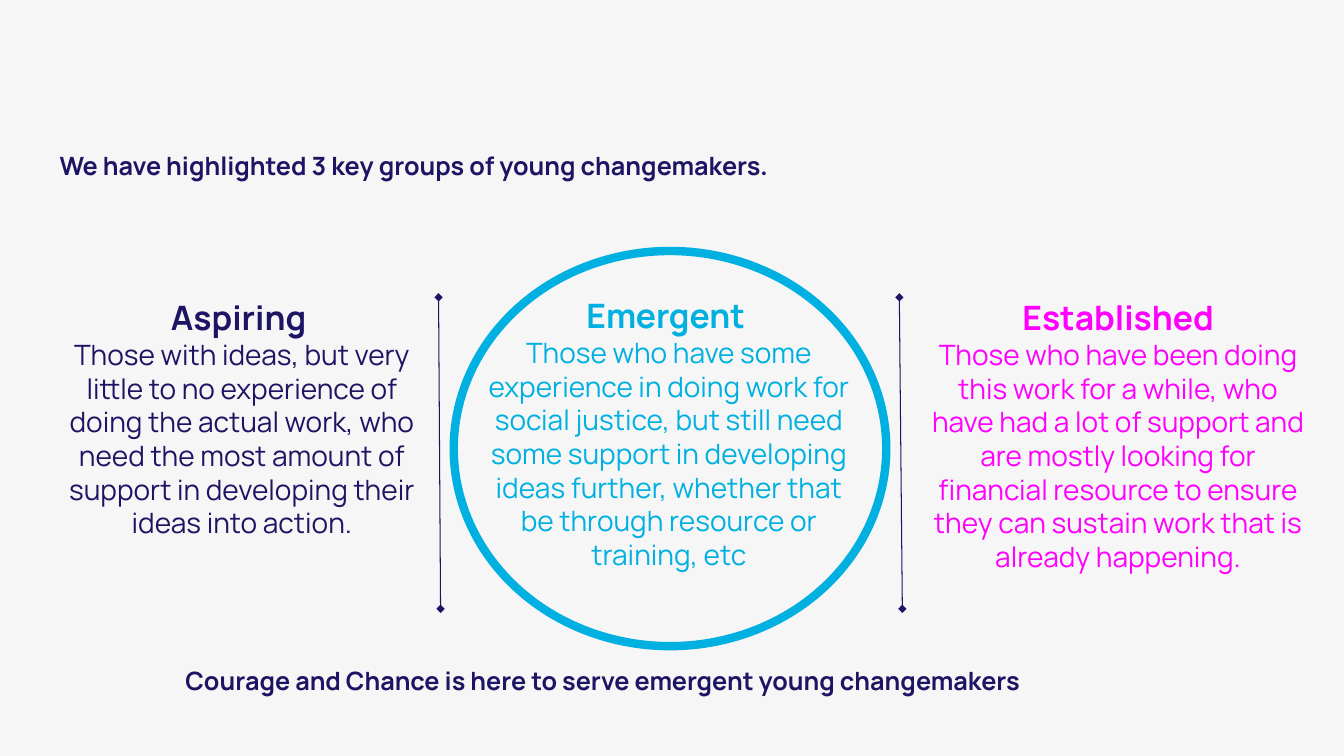
"""Build a slide that compares three groups of young changemakers."""
from lxml.etree import SubElement
from pptx import Presentation
from pptx.dml.color import RGBColor
from pptx.enum.shapes import MSO_CONNECTOR as Connector, MSO_SHAPE as Shape
from pptx.enum.text import MSO_ANCHOR as Anchor, MSO_AUTO_SIZE as AutoSize, PP_ALIGN as Align
from pptx.oxml.ns import qn
from pptx.util import Inches, Pt

COLORS = {"paper": "F6F6F6", "navy": "1E1464", "cyan": "00B0E0", "pink": "FF00FF"}
FONT = "Manrope"
HEADLINE = "We have highlighted 3 key groups of young changemakers"
CLOSING = "Courage and Chance is here to serve emergent young changemakers"
GROUPS = [
    ("Aspiring ", "Those with ideas, but very little to no experience of doing the actual work, "
     "who need the most amount of support in developing their ideas into action.",
     "navy", (0.67, 2.95, 3.46, 2.76)),
    ("Emergent ", "Those who have some experience in doing work for social justice, but still need "
     "some support in developing ideas further, whether that be through resource or training, etc",
     "cyan", (4.76, 2.93, 3.75, 2.76)),
    ("Established", "Those who have been doing this work for a while, who have had a lot of support "
     "and are mostly looking for financial resource to ensure they can sustain work that is "
     "already happening.",
     "pink", (9.17, 2.95, 3.84, 3.1)),
]
DIVIDERS = [(4.35, 4.37), (8.92, 8.95)]
DIVIDER_TOP, DIVIDER_BOTTOM = 2.95, 6.04
HIGHLIGHT = (4.5, 2.49, 4.29, 3.92)


def color(name):
    return RGBColor.from_string(COLORS[name])


def add_run(para, text, size, shade, bold=True, font=FONT):
    span = para.add_run()
    span.text = text
    span.font.name, span.font.size, span.font.bold = font, Pt(size), bold
    span.font.color.rgb = color(shade)


def prepare_frame(box, margin=0):
    frame = box.text_frame
    frame.word_wrap = True
    frame.auto_size = AutoSize.NONE
    frame.vertical_anchor = Anchor.TOP
    if margin == 0:
        frame.margin_left = frame.margin_right = frame.margin_top = frame.margin_bottom = 0
    return frame


def add_headline(page):
    title = page.shapes.title
    title.left, title.top, title.width, title.height = map(Inches, (0.59, 1.49, 12.17, 0.61))
    para = prepare_frame(title).paragraphs[0]
    para.alignment = Align.LEFT
    add_run(para, HEADLINE, 18, "navy")
    add_run(para, ".", 18, "navy", font="Calibri")


def add_group(page, name, detail, shade, place):
    frame = prepare_frame(page.shapes.add_textbox(*map(Inches, place)))
    heading, body = frame.paragraphs[0], frame.add_paragraph()
    heading.alignment = body.alignment = Align.CENTER
    add_run(heading, name, 24, shade)
    add_run(body, detail, 20, shade, bold=False)


def add_divider(page, start, end):
    divider = page.shapes.add_connector(
        Connector.STRAIGHT, *map(Inches, (start, DIVIDER_TOP, end, DIVIDER_BOTTOM)))
    divider.line.color.rgb = color("navy")
    divider.line.width = Pt(0.75)
    outline = divider.line._get_or_add_ln()
    for tip in ("a:headEnd", "a:tailEnd"):
        SubElement(outline, qn(tip), type="diamond")
    SubElement(divider._element.spPr, qn("a:effectLst"))


def add_highlight(page):
    ring = page.shapes.add_shape(Shape.OVAL, *map(Inches, HIGHLIGHT))
    ring.shadow.inherit = False
    ring.fill.background()
    ring.line.color.rgb = color("cyan")
    ring.line.width = Pt(6)


def add_closing(page):
    box = page.shapes.add_textbox(*map(Inches, (1.74, 6.55, 9.88, 0.4)))
    add_run(prepare_frame(box, margin=None).paragraphs[0], CLOSING, 18, "navy")


def main():
    deck = Presentation()
    deck.slide_width, deck.slide_height = Inches(13.33), Inches(7.5)
    page = deck.slides.add_slide(deck.slide_layouts.get_by_name("Title Only"))
    page.background.fill.solid()
    page.background.fill.fore_color.rgb = color("paper")
    add_headline(page)
    for group in GROUPS:
        add_group(page, *group)
    for start, end in DIVIDERS:
        add_divider(page, start, end)
    add_highlight(page)
    add_closing(page)
    deck.save("out.pptx")


if __name__ == "__main__":
    main()
